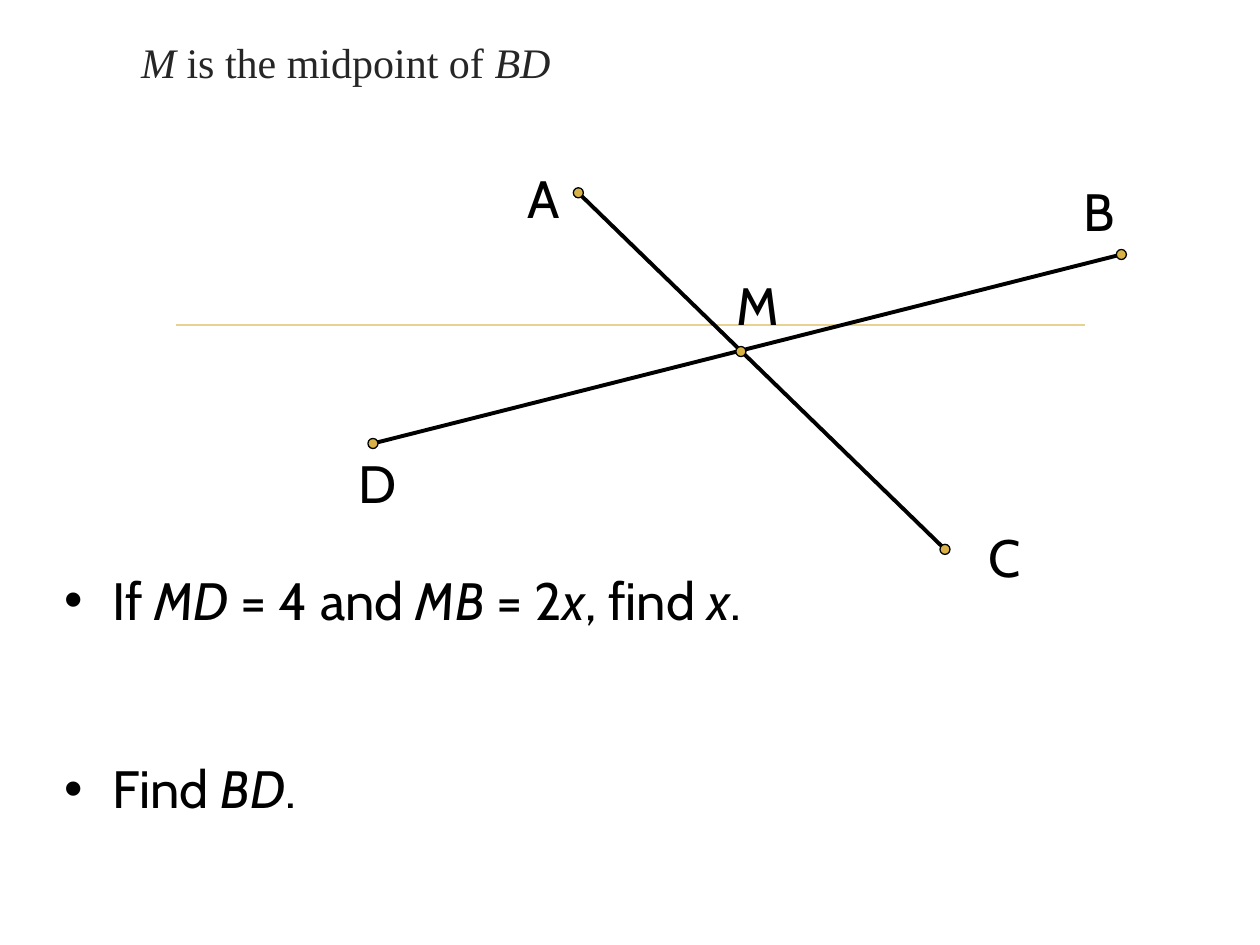
from dataclasses import dataclass

from lxml import etree
from pptx import Presentation
from pptx.dml.color import RGBColor
from pptx.enum.shapes import MSO_CONNECTOR, MSO_SHAPE
from pptx.enum.text import MSO_ANCHOR, MSO_AUTO_SIZE, PP_ALIGN
from pptx.oxml.ns import qn
from pptx.util import Inches, Pt

STRAIGHT = MSO_CONNECTOR.STRAIGHT
OVAL = MSO_SHAPE.OVAL
TOP = MSO_ANCHOR.TOP
NO_AUTOFIT = MSO_AUTO_SIZE.NONE
LEFT = PP_ALIGN.LEFT


@dataclass(frozen=True)
class Theme:
    ink: RGBColor = RGBColor(0x00, 0x00, 0x00)
    statement: RGBColor = RGBColor(0x26, 0x26, 0x26)
    rule: RGBColor = RGBColor(0xE8, 0xD1, 0x91)
    dot: RGBColor = RGBColor(0xD9, 0xB2, 0x47)
    statement_font: str = "Times New Roman"
    body_font: str = "Cabin"
    statement_size: float = 24
    body_size: float = 30


@dataclass(frozen=True)
class Box:
    left: float
    top: float
    width: float
    height: float


@dataclass(frozen=True)
class Point:
    name: str
    x: float
    y: float
    label: Box


THEME = Theme()
DOT_SIZE = 0.08
BULLET_INDENT = 0.38
QUESTION_GAP = 71.5

POINTS = {
    point.name: point
    for point in (
        Point("B", 8.9, 2.02, Box(8.5, 1.37, 1.17, 0.75)),
        Point("C", 7.5, 4.36, Box(7.75, 4.12, 1.17, 0.67)),
        Point("D", 2.96, 3.52, Box(2.75, 3.53, 1.17, 0.75)),
        Point("M", 5.88, 2.79, Box(5.75, 2.12, 1.17, 0.75)),
        Point("A", 4.59, 1.53, Box(4.09, 1.27, 0.45, 0.6)),
    )
}
SEGMENTS = ("DB", "AC")
STATEMENT = "*M* is the midpoint of *BD*"
QUESTIONS = ("If *MD* = 4 and *MB* = 2*x*, find *x*.", "Find *BD*.")


def place(shape, box: Box) -> None:
    shape.left, shape.top = Inches(box.left), Inches(box.top)
    shape.width, shape.height = Inches(box.width), Inches(box.height)


def add_bullet(paragraph) -> None:
    properties = paragraph._p.get_or_add_pPr()
    properties.set("marL", str(Inches(BULLET_INDENT)))
    properties.set("indent", str(-Inches(BULLET_INDENT)))
    etree.SubElement(properties, qn("a:buFont")).set("typeface", "Arial")
    etree.SubElement(properties, qn("a:buChar")).set("char", "•")


def write(shape, *lines: str, font: str = THEME.body_font,
          size: float = THEME.body_size, color: RGBColor = THEME.ink,
          bullets: bool = False, gap: float = 0, margin_top: float = 0.05,
          wrap: bool = True) -> None:
    frame = shape.text_frame
    frame.word_wrap = wrap
    frame.auto_size = NO_AUTOFIT
    frame.vertical_anchor = TOP
    frame.margin_top = Inches(margin_top)
    for index, line in enumerate(lines):
        paragraph = frame.add_paragraph() if index else frame.paragraphs[0]
        if bullets:
            add_bullet(paragraph)
        paragraph.alignment = LEFT
        paragraph.space_before = Pt(gap if index else 0)
        for position, piece in enumerate(line.split("*")):
            if piece:
                run = paragraph.add_run()
                run.text = piece
                run.font.name = font
                run.font.size = Pt(size)
                run.font.color.rgb = color
                run.font.italic = position % 2 == 1


def add_line(shapes, start: tuple[float, float], end: tuple[float, float],
             color: RGBColor, weight: float) -> None:
    line = shapes.add_connector(STRAIGHT, *map(Inches, start + end))
    line.line.color.rgb = color
    line.line.width = Pt(weight)
    etree.SubElement(line._element.spPr, qn("a:effectLst"))


def add_dot(shapes, point: Point) -> None:
    dot = shapes.add_shape(OVAL, Inches(point.x - DOT_SIZE / 2),
                           Inches(point.y - DOT_SIZE / 2),
                           Inches(DOT_SIZE), Inches(DOT_SIZE))
    dot.shadow.inherit = False
    dot.fill.solid()
    dot.fill.fore_color.rgb = THEME.dot
    dot.line.color.rgb = THEME.ink
    dot.line.width = Pt(0.75)


def add_label(shapes, point: Point) -> None:
    label = shapes.add_textbox(0, 0, 0, 0)
    place(label, point.label)
    write(label, point.name, wrap=point.name != "A")


def draw_figure(shapes) -> None:
    for start, end in SEGMENTS:
        first, last = POINTS[start], POINTS[end]
        add_line(shapes, (first.x, first.y), (last.x, last.y), THEME.ink, 2.25)
    for point in POINTS.values():
        add_label(shapes, point)
    for point in POINTS.values():
        add_dot(shapes, point)


def main() -> None:
    deck = Presentation()
    deck.slide_width, deck.slide_height = Inches(10), Inches(7.5)
    slide = deck.slides.add_slide(deck.slide_layouts[1])
    statement, questions = slide.placeholders

    add_line(slide.shapes, (1.4, 2.58), (8.61, 2.58), THEME.rule, 1.25)
    place(statement, Box(1.02, 0.2, 5.61, 0.72))
    write(statement, STATEMENT, font=THEME.statement_font,
          size=THEME.statement_size, color=THEME.statement, margin_top=0.09)
    draw_figure(slide.shapes.add_group_shape().shapes)
    place(questions, Box(0.41, 4.46, 7.02, 2.69))
    write(questions, *QUESTIONS, bullets=True, gap=QUESTION_GAP)

    deck.save("out.pptx")


if __name__ == "__main__":
    main()
